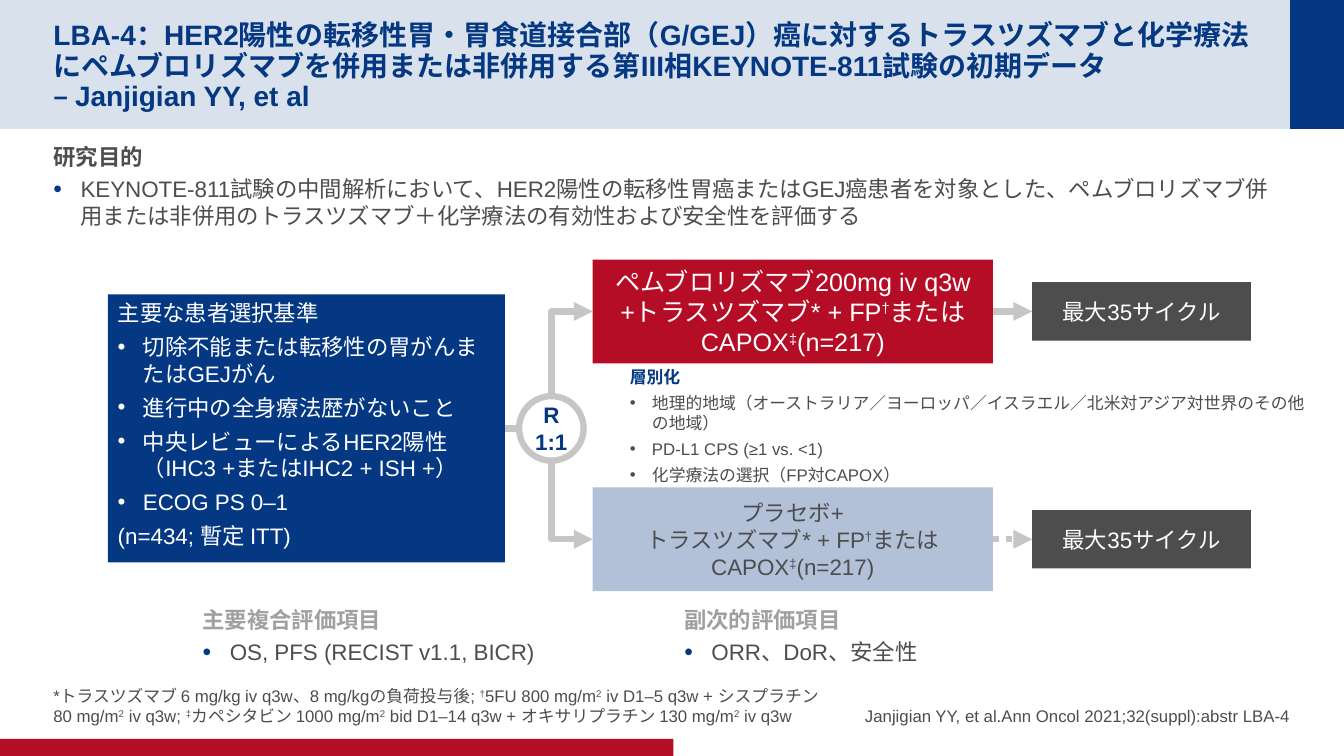
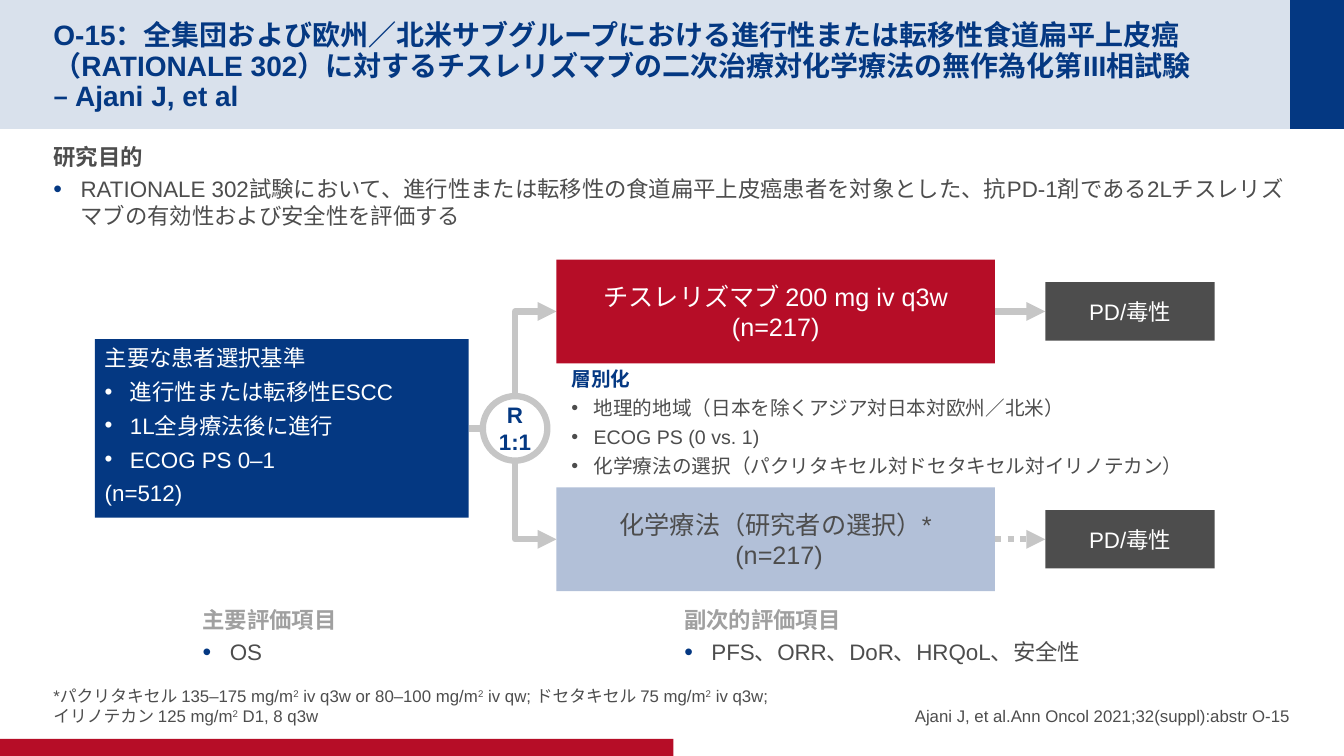
"""Build two clinical-trial design slides that share one flow diagram."""
from dataclasses import dataclass, replace
from typing import NamedTuple

from lxml.etree import SubElement
from pptx import Presentation
from pptx.dml.color import RGBColor
from pptx.enum.dml import MSO_LINE
from pptx.enum.shapes import MSO_CONNECTOR as Route, MSO_SHAPE as Preset
from pptx.enum.text import MSO_ANCHOR as Anchor, MSO_AUTO_SIZE as AutoSize, PP_ALIGN as Align
from pptx.oxml.ns import qn
from pptx.util import Emu, Inches, Pt

CELL = Inches(0.1)
COLUMNS, ROWS = 133.33, 75
COLORS = {
    "navy": "043882", "mist": "D9E1EC", "red": "B60D27", "blue": "B2C0D8",
    "dark": "4D4D4D", "gray": "A0A0A0", "line": "C6C6C6", "white": "FFFFFF",
}


class Box(NamedTuple):
    left: float
    top: float
    width: float
    height: float

    @property
    def right(self) -> float:
        return self.left + self.width


class Insets(NamedTuple):
    left: float = 1
    top: float = 0.5
    right: float = 1
    bottom: float = 0.5


@dataclass(frozen=True)
class Style:
    size: float
    color: str
    bold: bool = False
    align: Align = Align.LEFT
    after: float = 0
    spacing: float = 1.0
    indent: float = 0
    bullet_color: str = ""


class Line(NamedTuple):
    style: Style
    text: str


@dataclass(frozen=True)
class Trial:
    title: str
    objective: str
    criteria: tuple[str, ...]
    patients: str
    criteria_width: float
    criteria_height: float
    arm: str
    control: str
    control_size: float
    arm_left: float
    arm_width: float
    outcome: str
    outcome_left: float
    outcome_width: float
    strata: tuple[str, ...]
    strata_size: float
    strata_left: float
    strata_width: float
    primary_heading: str
    primary: str
    secondary: str
    footnote: str
    footnote_width: float
    citation: str


TITLE = Style(20, "navy", bold=True, spacing=0.9)
HEADING = Style(16, "dark", bold=True, after=4)
BULLET = Style(16, "dark", after=4, indent=2.7, bullet_color="navy")
ENDPOINT = replace(HEADING, color="gray")
CRITERIA = Style(16, "white", after=5)
CRITERION = replace(CRITERIA, indent=2.5, bullet_color="white")
STRATA = Style(12, "navy", bold=True, after=4)
STRATUM = Style(12, "dark", after=4, indent=2.2, bullet_color="dark")
NOTE = Style(12, "dark", after=4)
CITATION = replace(NOTE, align=Align.RIGHT)
ARM = Style(18, "white", align=Align.CENTER)
OUTCOME = replace(ARM, size=16)
RANDOM = Style(16, "navy", bold=True, align=Align.CENTER)

TITLE_BOX = Box(5.3, 2, 120.1, 8.8)
OBJECTIVE_BOX = Box(5.3, 13.7, 122.7, 51.9)
BANDS = (
    (Box(0, 0, COLUMNS, 12.8), "mist"),
    (Box(128, 0, COLUMNS - 128, 12.8), "navy"),
    (Box(0, 73.3, 66.8, 1.7), "red"),
)
FLUSH = Insets(0, 0.5, 0, 0.5)
SIDES = Insets(1, 0, 1, 0)
NONE = Insets(0, 0, 0, 0)
ARM_ROW, MIDDLE_ROW, CONTROL_ROW = 30.9, 42.5, 53.5
ARM_HEIGHT, OUTCOME_HEIGHT, CIRCLE = 10.3, 5.8, 6.4
BEND, STUB = 4.1, 1.4

TRIALS = (
    Trial(
        title="LBA-4：HER2陽性の転移性胃・胃食道接合部（G/GEJ）癌に対するトラスツズマブと化学療法にペムブロリズマブを併用または非併用する第III相KEYNOTE-811試験の初期データ \n– Janjigian YY, et al",
        objective="KEYNOTE-811試験の中間解析において、HER2陽性の転移性胃癌またはGEJ癌患者を対象とした、ペムブロリズマブ併用または非併用のトラスツズマブ＋化学療法の有効性および安全性を評価する",
        criteria=("切除不能または転移性の胃がんまたはGEJがん", "進行中の全身療法歴がないこと",
                  "中央レビューによるHER2陽性\n（IHC3 +またはIHC2 + ISH +）", "ECOG PS 0–1"),
        patients="(n=434; 暫定 ITT)", criteria_width=39.4, criteria_height=26.6,
        arm="ペムブロリズマブ200mg iv q3w +トラスツズマブ* + FP^†^またはCAPOX^‡^(n=217)",
        control="プラセボ+\nトラスツズマブ* + FP^†^またはCAPOX^‡^(n=217)",
        control_size=16, arm_left=58.8, arm_width=39.7,
        outcome="最大35サイクル", outcome_left=102.4, outcome_width=21.7,
        strata=("地理的地域（オーストラリア／ヨーロッパ／イスラエル／北米対アジア対世界のその他の地域）",
                "PD-L1 CPS (≥1 vs. <1)", "化学療法の選択（FP対CAPOX）"),
        strata_size=12, strata_left=61.5, strata_width=69.7,
        primary_heading="主要複合評価項目", primary="OS, PFS (RECIST v1.1, BICR)",
        secondary="ORR、DoR、安全性",
        footnote="*トラスツズマブ 6 mg/kg iv q3w、8 mg/kgの負荷投与後; ^†^5FU 800 mg/m^2^ iv D1–5 q3w + シスプラチン 80 mg/m^2^ iv q3w; ^‡^カペシタビン 1000 mg/m^2^ bid D1–14 q3w + オキサリプラチン 130 mg/m^2^ iv q3w",
        footnote_width=77,
        citation="Janjigian YY, et al.Ann Oncol 2021;32(suppl):abstr LBA-4",
    ),
    Trial(
        title="O-15：全集団および欧州／北米サブグループにおける進行性または転移性食道扁平上皮癌（RATIONALE 302）に対するチスレリズマブの二次治療対化学療法の無作為化第III相試験 \n– Ajani J, et al",
        objective="RATIONALE 302試験において、進行性または転移性の食道扁平上皮癌患者を対象とした、抗PD-1剤である2Lチスレリズマブの有効性および安全性を評価する",
        criteria=("進行性または転移性ESCC", "1L全身療法後に進行", "ECOG PS 0–1"),
        patients="(n=512)", criteria_width=37.1, criteria_height=17.7,
        arm="チスレリズマブ 200 mg iv q3w\n(n=217)",
        control="化学療法（研究者の選択）*\n (n=217)",
        control_size=18, arm_left=55.2, arm_width=43.5,
        outcome="PD/毒性", outcome_left=103.7, outcome_width=16.8,
        strata=("地理的地域（日本を除くアジア対日本対欧州／北米）", "ECOG PS (0 vs. 1)",
                "化学療法の選択（パクリタキセル対ドセタキセル対イリノテカン）"),
        strata_size=14, strata_left=55.7, strata_width=72.9,
        primary_heading="主要評価項目", primary="OS",
        secondary="PFS、ORR、DoR、HRQoL、安全性",
        footnote="*パクリタキセル 135–175 mg/m^2^ iv q3w or 80–100 mg/m^2^ iv qw; ドセタキセル 75 mg/m^2^ iv q3w; イリノテカン 125 mg/m^2^ D1, 8 q3w",
        footnote_width=72.3,
        citation="Ajani J, et al.Ann Oncol 2021;32(suppl):abstr O-15",
    ),
)


def cells(count: float) -> Emu:
    return Emu(round(count * CELL))


def rgb(name: str) -> RGBColor:
    return RGBColor.from_string(COLORS[name])


def place(shape, box: Box) -> None:
    shape.left, shape.top, shape.width, shape.height = map(cells, box)


def centered(left: float, row: float, width: float, height: float) -> Box:
    return Box(left, row - height / 2, width, height)


def add_bullet(para, style: Style) -> None:
    props = para._p.get_or_add_pPr()
    props.set("marL", str(cells(style.indent)))
    props.set("indent", str(-cells(style.indent)))
    SubElement(SubElement(props, qn("a:buClr")), qn("a:srgbClr"), val=COLORS[style.bullet_color])
    if style.bullet_color != style.color:
        SubElement(props, qn("a:buSzPct"), val="110000")
    SubElement(props, qn("a:buFont"), typeface="Arial")
    SubElement(props, qn("a:buChar"), char="•")


def write_line(para, line: Line) -> None:
    style = line.style
    para.alignment, para.line_spacing = style.align, style.spacing
    para.space_before, para.space_after = Pt(0), Pt(style.after)
    if style.bullet_color:
        add_bullet(para, style)
    font = para.font
    font.name, font.size, font.bold = "Arial", Pt(style.size), style.bold
    font.color.rgb = rgb(style.color)
    for index, part in enumerate(line.text.split("^")):
        for row, text in enumerate(part.split("\n")):
            if row:
                para.add_line_break()
            if text:
                span = para.add_run()
                span.text = text
                if index % 2:
                    span._r.get_or_add_rPr().set("baseline", "30000")


def write(shape, lines: list[Line], insets: Insets, anchor: Anchor, wrap: bool = True) -> None:
    frame = shape.text_frame
    frame.word_wrap, frame.auto_size, frame.vertical_anchor = wrap, AutoSize.NONE, anchor
    frame.margin_left, frame.margin_top, frame.margin_right, frame.margin_bottom = map(cells, insets)
    for index, line in enumerate(lines):
        write_line(frame.add_paragraph() if index else frame.paragraphs[0], line)


def add_text(slide, box: Box, lines: list[Line], insets: Insets = Insets(),
             anchor: Anchor = Anchor.TOP) -> None:
    write(slide.shapes.add_textbox(*map(cells, box)), lines, insets, anchor)


def add_block(slide, box: Box, fill: str):
    block = slide.shapes.add_shape(Preset.RECTANGLE, *map(cells, box))
    block.shadow.inherit = False
    block.fill.solid()
    block.fill.fore_color.rgb = rgb(fill)
    block.line.fill.background()
    return block


def add_label(slide, box: Box, fill: str, line: Line) -> None:
    write(add_block(slide, box, fill), [line], SIDES, Anchor.MIDDLE)


def add_link(slide, start: tuple[float, float], end: tuple[float, float], arrow: bool = True,
             dotted: bool = False, route: Route = Route.STRAIGHT):
    link = slide.shapes.add_connector(route, *map(cells, (*start, *end)))
    link.line.width = Pt(4.5)
    link.line.color.rgb = rgb("line")
    if dotted:
        link.line.dash_style = MSO_LINE.ROUND_DOT
    props = link.element.spPr
    if arrow:
        SubElement(props.find(qn("a:ln")), qn("a:tailEnd"), type="triangle")
    SubElement(props, qn("a:effectLst"))
    return link


def add_bend(slide, start: tuple[float, float], end: tuple[float, float]) -> None:
    link = add_link(slide, start, end, route=Route.ELBOW)
    (x, y), (end_x, end_y) = start, end
    length, depth = abs(end_y - y), end_x - x
    place(link, centered((x + end_x - length) / 2, (y + end_y) / 2, length, depth))
    upward = end_y < y
    props = link.element.spPr
    props.find(qn("a:prstGeom")).set("prst", "bentConnector2")
    frame = props.find(qn("a:xfrm"))
    frame.set("rot", str((90 if upward else 270) * 60000))
    frame.set("flipH", "1")
    frame.set("flipV", "1" if upward else "0")


def add_bands(slide, layout) -> None:
    for number, (box, fill) in enumerate(BANDS, start=101):
        band = add_block(slide, box, fill).element
        band.nvSpPr.cNvPr.set("id", str(number))
        layout.shapes.element.append(band)


def add_flow(slide, trial: Trial) -> None:
    circle = centered(trial.arm_left - BEND - CIRCLE / 2, MIDDLE_ROW, CIRCLE, CIRCLE)
    ring = slide.shapes.add_shape(Preset.OVAL, *map(cells, circle))
    ring.shadow.inherit = False
    ring.fill.background()
    ring.line.color.rgb, ring.line.width = rgb("line"), Pt(4.5)
    write(ring, [Line(RANDOM, "R"), Line(RANDOM, "1:1")], Insets(), Anchor.MIDDLE, wrap=False)

    center = trial.arm_left - BEND
    edge = circle.left - STUB
    add_link(slide, (edge, MIDDLE_ROW), (circle.left, MIDDLE_ROW), arrow=False)
    criteria = centered(edge - trial.criteria_width, MIDDLE_ROW,
                        trial.criteria_width, trial.criteria_height)
    write(add_block(slide, criteria, "navy"),
          [Line(CRITERIA, "主要な患者選択基準"), *(Line(CRITERION, text) for text in trial.criteria),
           Line(CRITERIA, trial.patients)], Insets(), Anchor.TOP)

    control = replace(ARM, size=trial.control_size, color="dark")
    for row, fill, line, exit_row in (
        (ARM_ROW, "red", Line(ARM, trial.arm), circle.top),
        (CONTROL_ROW, "blue", Line(control, trial.control), circle.top + CIRCLE),
    ):
        arm = centered(trial.arm_left, row, trial.arm_width, ARM_HEIGHT)
        add_bend(slide, (center, exit_row), (arm.left, row))
        add_link(slide, (arm.right, row), (trial.outcome_left, row), dotted=row == CONTROL_ROW)
        add_label(slide, arm, fill, line)
        add_label(slide, centered(trial.outcome_left, row, trial.outcome_width, OUTCOME_HEIGHT),
                  "dark", Line(OUTCOME, trial.outcome))


def add_trial(slide, trial: Trial) -> None:
    title = slide.shapes.title
    place(title, TITLE_BOX)
    write(title, [Line(TITLE, trial.title)], Insets(0, 0.5, 0, 0), Anchor.MIDDLE)
    add_text(slide, OBJECTIVE_BOX, [Line(HEADING, "研究目的"), Line(BULLET, trial.objective)], FLUSH)
    add_text(slide, Box(5.3, 66.7, trial.footnote_width, 5.3), [Line(NOTE, trial.footnote)],
             NONE, Anchor.BOTTOM)
    add_text(slide, Box(67.8, 66.7, 60.2, 5.3), [Line(CITATION, trial.citation)], NONE, Anchor.BOTTOM)
    add_flow(slide, trial)
    stratum = replace(STRATUM, size=trial.strata_size)
    add_text(slide, Box(trial.strata_left, 35.9, trial.strata_width, 9.8),
             [Line(replace(STRATA, size=trial.strata_size), "層別化"),
              *(Line(stratum, text) for text in trial.strata)])
    for box, insets, heading, text in (
        (Box(20.1, 59.6, 45.2, 7.7), FLUSH, trial.primary_heading, trial.primary),
        (Box(66.9, 59.6, 48.6, 7.3), Insets(), "副次的評価項目", trial.secondary),
    ):
        add_text(slide, box, [Line(ENDPOINT, heading), Line(BULLET, text)], insets)


def main() -> None:
    deck = Presentation()
    deck.slide_width, deck.slide_height = cells(COLUMNS), cells(ROWS)
    layout = deck.slide_layouts.get_by_name("Title Only")
    pages = [deck.slides.add_slide(layout) for _ in TRIALS]
    add_bands(pages[0], layout)
    for page, trial in zip(pages, TRIALS):
        add_trial(page, trial)
    deck.save("out.pptx")


if __name__ == "__main__":
    main()
